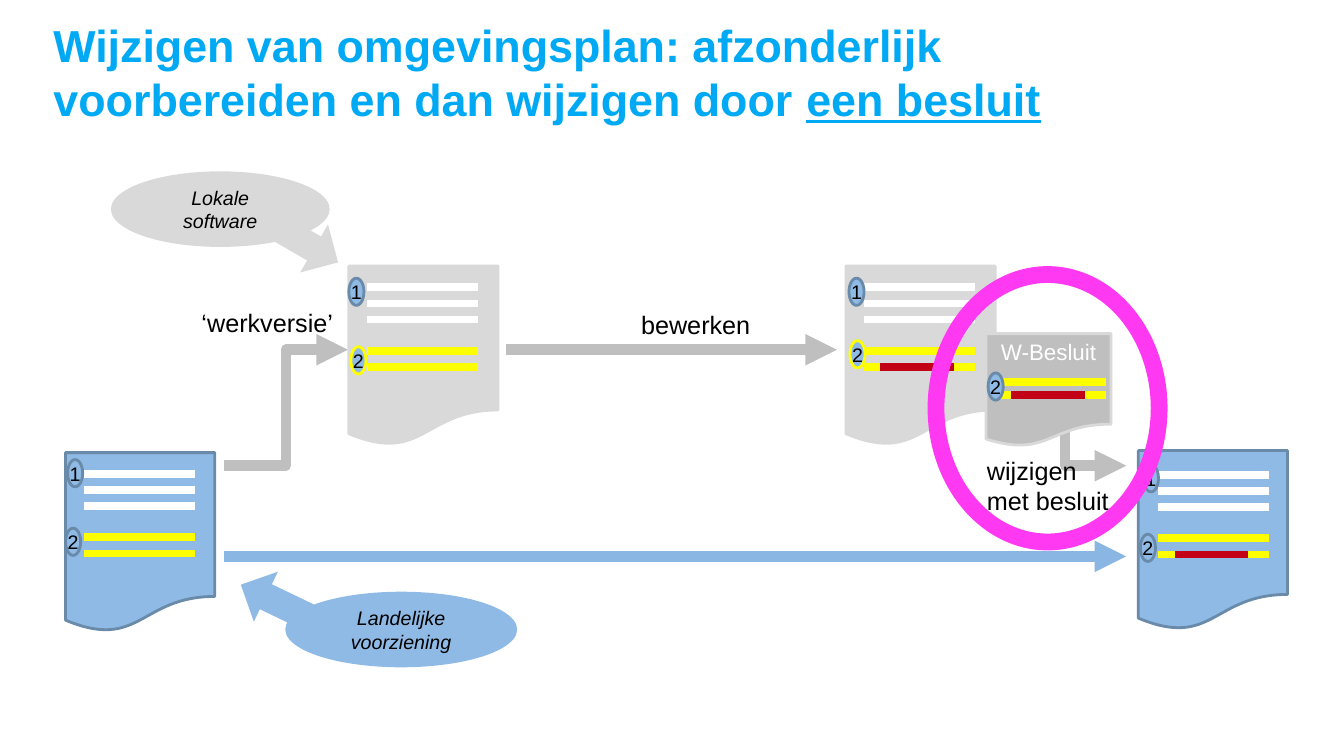
from dataclasses import dataclass

from lxml import etree
from pptx import Presentation
from pptx.dml.color import RGBColor
from pptx.enum.shapes import MSO_CONNECTOR as CONN, MSO_SHAPE as SHAPE
from pptx.enum.text import MSO_ANCHOR as ANCHOR, MSO_AUTO_SIZE as AUTO, PP_ALIGN as ALIGN
from pptx.oxml.ns import qn
from pptx.util import Inches, Pt


@dataclass(frozen=True)
class Theme:
    font: str = "Arial"
    title: str = "00A9F3"
    text: str = "000000"
    white: str = "FFFFFF"
    blue: str = "8EBAE5"
    blue_arrow: str = "89B6E2"
    blue_edge: str = "698AA9"
    light: str = "D9D9D9"
    grey: str = "BFBFBF"
    yellow: str = "FFFF00"
    red: str = "C20016"
    pink: str = "FF39F2"
    title_size: int = 32
    label_size: int = 18
    decree_size: int = 16
    small_size: int = 14
    arrow_width: float = 7.5
    rule_width: float = 5.5
    edge_width: float = 2


T = Theme()
TITLE = [("Wijzigen van omgevingsplan: afzonderlijk voorbereiden en dan wijzigen door ", False),
         ("een besluit", True)]
ARROWS = [
    (CONN.STRAIGHT, 2.22, 5.52, 11.17, 5.52, T.blue_arrow),
    (CONN.ELBOW, 2.22, 4.62, 3.45, 3.47, T.grey),
    (CONN.STRAIGHT, 5.02, 3.47, 8.3, 3.47, T.grey),
    (CONN.ELBOW, 9.96, 3.47, 11.17, 4.62, T.grey),
]
PAGE_SIZE = (1.48, 1.78)
WHITE_RULES, YELLOW_RULES = (0, 0.16, 0.32), (0.63, 0.79)
PAGES = [
    dict(at=(0.65, 4.49), fill=T.blue, edge=T.blue_edge, rules=(0.83, 4.7), changed=False,
         marks=[("1", 0.67, 4.56, T.blue_edge), ("2", 0.65, 5.24, T.blue_edge)]),
    dict(at=(3.46, 2.64), fill=T.light, edge=T.light, rules=(3.64, 2.85), changed=False,
         marks=[("1", 3.46, 2.76, T.blue_edge), ("2", 3.48, 3.44, T.yellow)]),
    dict(at=(8.39, 2.64), fill=T.light, edge=T.light, rules=(8.57, 2.85), changed=True,
         marks=[("1", 8.42, 2.76, T.blue_edge), ("2", 8.43, 3.38, T.yellow)]),
    dict(at=(11.29, 4.47), fill=T.blue, edge=T.blue_edge, rules=(11.49, 4.71), changed=True,
         marks=[("1", 11.34, 4.61, T.blue_edge), ("2", 11.31, 5.3, T.blue_edge)]),
]
DECREE = ("W-Besluit", 9.78, 3.31, 1.24, 1.12)
DECREE_RULES = (9.87, (3.79, 3.92))
DECREE_MARK = ("2", 9.8, 3.7, T.blue_edge)
LABELS = [
    ("‘werkversie’", 1.9, 3, 1.52, 0.4, False),
    ("bewerken", 6.26, 3.02, 1.3, 0.4, False),
    ("wijzigen met besluit", 9.69, 4.47, 1.41, 0.71, True),
]
CALLOUTS = [
    ("Landelijke voorziening", (2.83, 5.87, 2.3, 0.75), (2.34, 5.74, 0.99, 0.55), 205.7, T.blue),
    ("Lokale software", (1.1, 1.7, 2.17, 0.75), (2.43, 2.08, 0.99, 0.55), 30.1, T.light),
]
RING = (9.2, 2.64, 2.38, 2.82)


def rgb(value):
    return RGBColor.from_string(value)


def style(p, size, color=T.text, align=ALIGN.LEFT, bold=False, italic=False):
    p.alignment = align
    p.font.name, p.font.size = T.font, Pt(size)
    p.font.bold, p.font.italic = bold, italic
    p.font.color.rgb = rgb(color)


def add_line(shapes, kind, x1, y1, x2, y2, color, width, arrow=False):
    c = shapes.add_connector(kind, *map(Inches, (x1, y1, x2, y2)))
    c.line.color.rgb, c.line.width = rgb(color), Pt(width)
    if arrow:
        etree.SubElement(c.line._get_or_add_ln(), qn("a:tailEnd"), type="triangle")
    etree.SubElement(c._element.spPr, qn("a:effectLst"))


def add_figure(shapes, kind, box, fill, edge=None):
    sp = shapes.add_shape(kind, *map(Inches, box))
    sp.shadow.inherit = False
    sp.fill.solid()
    sp.fill.fore_color.rgb = rgb(fill)
    if edge:
        sp.line.color.rgb, sp.line.width = rgb(edge), Pt(T.edge_width)
    else:
        sp.line.fill.background()
    return sp


def add_text(sp, text, size, color=T.text, anchor=ANCHOR.MIDDLE, italic=False):
    tf = sp.text_frame
    tf.vertical_anchor = anchor
    p = tf.paragraphs[0]
    p.add_run().text = text
    style(p, size, color, ALIGN.CENTER, italic=italic)
    return tf


def add_mark(shapes, text, x, y, edge):
    sp = add_figure(shapes, SHAPE.OVAL, (x, y, 0.15, 0.27), T.blue, edge)
    tf = add_text(sp, text, T.small_size)
    tf.word_wrap = False
    tf.margin_left = tf.margin_right = tf.margin_top = tf.margin_bottom = 0


def add_rules(shapes, x, ys, color, changed=False):
    for y in ys:
        add_line(shapes, CONN.STRAIGHT, x, y, x + 1.1, y, color, T.rule_width)
    if changed:
        add_line(shapes, CONN.STRAIGHT, x + 0.16, y, x + 0.89, y, T.red, T.rule_width)


def add_page(shapes, page):
    add_figure(shapes, SHAPE.FLOWCHART_DOCUMENT, page["at"] + PAGE_SIZE, page["fill"], page["edge"])
    x, top = page["rules"]
    add_rules(shapes, x, [top + dy for dy in WHITE_RULES], T.white)
    add_rules(shapes, x, [top + dy for dy in YELLOW_RULES], T.yellow, page["changed"])
    for mark in page["marks"]:
        add_mark(shapes, *mark)


def add_title(s):
    sp = s.shapes.title
    sp.left, sp.top, sp.width, sp.height = map(Inches, (0.43, 0.13, 10.97, 0.79))
    tf = sp.text_frame
    tf.auto_size, tf.vertical_anchor = AUTO.NONE, ANCHOR.TOP
    p = tf.paragraphs[0]
    for text, underline in TITLE:
        r = p.add_run()
        r.text = text
        if underline:
            r.font.underline = True
    style(p, T.title_size, T.title, bold=True)


def add_decree(shapes):
    text, *box = DECREE
    sp = add_figure(shapes, SHAPE.FLOWCHART_DOCUMENT, box, T.grey, T.light)
    add_text(sp, text, T.decree_size, T.white, ANCHOR.TOP)
    add_rules(shapes, *DECREE_RULES, T.yellow, True)
    add_mark(shapes, *DECREE_MARK)


def add_label(shapes, text, x, y, w, h, wrap):
    tf = shapes.add_textbox(*map(Inches, (x, y, w, h))).text_frame
    tf.word_wrap = wrap
    tf.auto_size = AUTO.SHAPE_TO_FIT_TEXT
    p = tf.paragraphs[0]
    p.add_run().text = text
    style(p, T.label_size)


def main():
    prs = Presentation()
    prs.slide_width, prs.slide_height = Inches(13.33), Inches(7.5)
    s = prs.slides.add_slide(prs.slide_layouts[5])
    shapes = s.shapes
    add_title(s)
    for arrow in ARROWS:
        add_line(shapes, *arrow, T.arrow_width, arrow=True)
    for page in PAGES:
        add_page(shapes, page)
    add_decree(shapes)
    for label in LABELS:
        add_label(shapes, *label)
    for text, oval, pointer, angle, color in CALLOUTS:
        add_figure(shapes, SHAPE.RIGHT_ARROW, pointer, color).rotation = angle
        add_text(add_figure(shapes, SHAPE.OVAL, oval, color), text, T.small_size, italic=True)
    add_figure(shapes, SHAPE.DONUT, RING, T.pink).adjustments[0] = 0.07
    prs.save("out.pptx")


if __name__ == "__main__":
    main()
